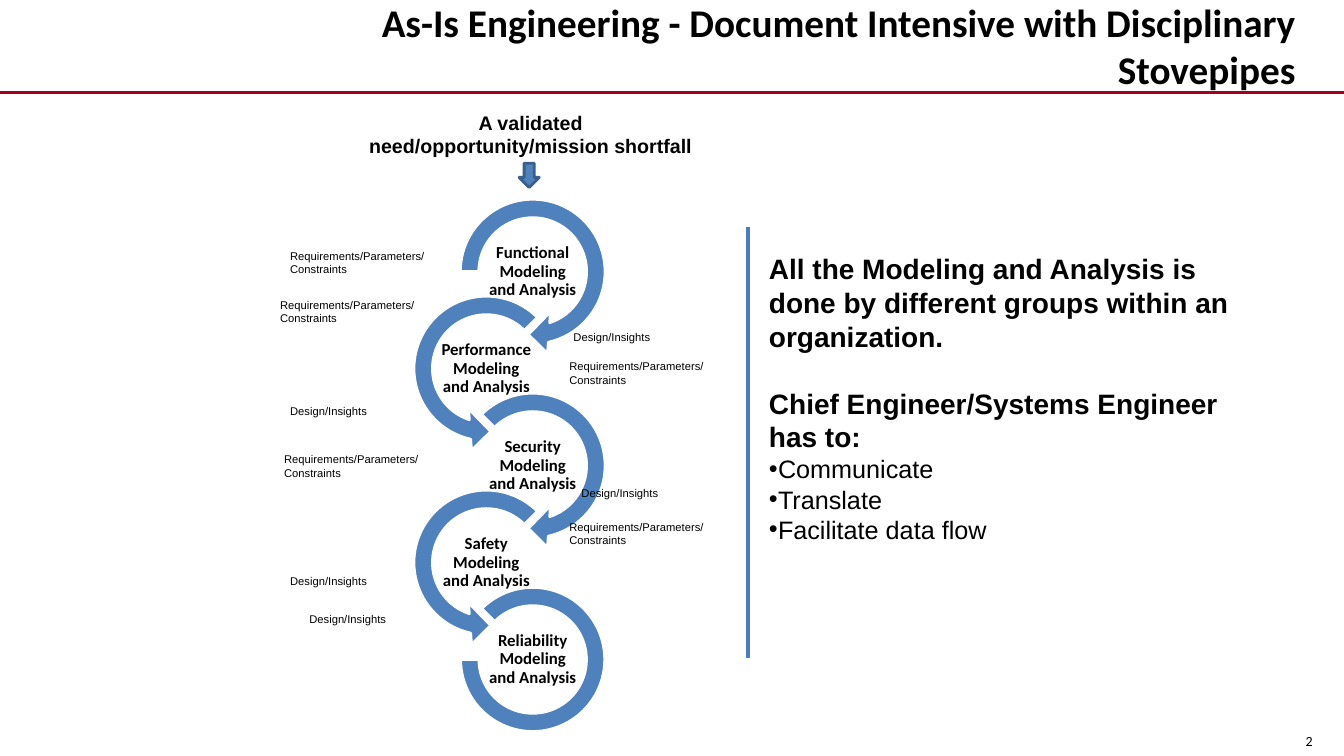
from lxml.etree import SubElement
from pptx import Presentation
from pptx.dml.color import RGBColor
from pptx.enum.shapes import MSO_CONNECTOR, MSO_SHAPE
from pptx.enum.text import MSO_ANCHOR, MSO_AUTO_SIZE, PP_ALIGN
from pptx.oxml.ns import qn
from pptx.util import Inches, Pt

COLORS = {
    "text": "000000",
    "paper": "FFFFFF",
    "rule": "A50021",
    "ring": "4F81BD",
    "divider": "4B7EBC",
    "arrow_edge": "3A5F8C",
}
CELL = 0.1  # grid column and row, in inches
COLUMNS, ROWS = 133.33, 75


def grid(*cells):
    return [Inches(CELL * count) for count in cells]


class SlideBuilder:
    """Places styled elements on the current page by grid columns and rows."""

    def __init__(self, page):
        self.page = page

    def color(self, name):
        return RGBColor.from_string(COLORS[name])

    def style(self, para, size, bold=False, font="Arial", align=PP_ALIGN.LEFT):
        para.alignment = align
        para.font.name = font
        para.font.size = Pt(size)
        para.font.bold = bold
        para.font.color.rgb = self.color("text")

    def title(self, text, area):
        box = self.page.shapes.title
        box.left, box.top, box.width, box.height = grid(*area)
        frame = box.text_frame
        frame.text = text
        frame.word_wrap = True
        frame.auto_size = MSO_AUTO_SIZE.NONE
        frame.vertical_anchor = MSO_ANCHOR.MIDDLE
        self.style(frame.paragraphs[0], 28, True, "Calibri", PP_ALIGN.RIGHT)

    def text(self, text, area, size, **style):
        box = self.page.shapes.add_textbox(*grid(*area))
        box.text_frame.word_wrap = True
        para = box.text_frame.paragraphs[0]
        para.text = text
        self.style(para, size, **style)
        return box.text_frame

    def caption(self, text, area):
        """Tight, centred text inside a ring."""
        frame = self.text(text, area, 12, bold=True, font="Calibri", align=PP_ALIGN.CENTER)
        frame.vertical_anchor = MSO_ANCHOR.MIDDLE
        frame.margin_left = frame.margin_right = Inches(0.01)
        frame.margin_top = frame.margin_bottom = Inches(0.01)
        frame.paragraphs[0].line_spacing = 0.9

    def bullet(self, frame, text, size):
        para = frame.add_paragraph()
        para.text = text
        properties = para._p.get_or_add_pPr()
        properties.set("marL", str(Inches(0.09)))
        properties.set("indent", str(-Inches(0.09)))
        SubElement(properties, qn("a:buFont"), typeface="Arial")
        SubElement(properties, qn("a:buChar"), char="•")
        self.style(para, size)

    def shape(self, kind, area, fill, edge=None, adjustments=()):
        shape = self.page.shapes.add_shape(kind, *grid(*area))
        shape.shadow.inherit = False
        shape.fill.solid()
        shape.fill.fore_color.rgb = self.color(fill)
        if edge:
            shape.line.color.rgb = self.color(edge)
            shape.line.width = Pt(2)
        else:
            shape.line.fill.background()
        for index, value in enumerate(adjustments):
            shape.adjustments[index] = value
        return shape

    def line(self, ends, color, width):
        line = self.page.shapes.add_connector(MSO_CONNECTOR.STRAIGHT, *grid(*ends))
        line.line.color.rgb = self.color(color)
        line.line.width = Pt(width)
        SubElement(line._element.spPr, qn("a:effectLst"))

    def page_number(self, number, area):
        frame = self.shape(MSO_SHAPE.RECTANGLE, area, "paper").text_frame
        frame.word_wrap = False
        frame.vertical_anchor = MSO_ANCHOR.MIDDLE
        frame.text = number
        self.style(frame.paragraphs[0], 10, font="Calibri", align=PP_ALIGN.RIGHT)


def add_discipline_chain(builder):
    right_arrow, left_arrow = MSO_SHAPE.CIRCULAR_ARROW, MSO_SHAPE.LEFT_CIRCULAR_ARROW
    left_turn = (0.11, 11.423, 63, 189, 0.125)
    rings = [
        ("Functional", right_arrow, (0.11, 11.423, 45, 108, 0.125)),
        ("Performance", left_arrow, left_turn),
        ("Security", right_arrow, (0.11, 11.423, 45, 135, 0.125)),
        ("Safety", left_arrow, left_turn),
        ("Reliability", MSO_SHAPE.BLOCK_ARC, (135, 108, 0.127)),
    ]
    pitch = 9.62
    for index, (discipline, kind, adjustments) in enumerate(rings):
        left = 39.9 if index % 2 else 44.5
        top = 18.6 + pitch * index
        inset = 1.2 if kind == MSO_SHAPE.BLOCK_ARC else 0
        size = 16.7 - 2 * inset
        builder.shape(kind, (left + inset, top + inset, size, size), "ring", "paper", adjustments)
        builder.caption(f"{discipline} Modeling and Analysis", (left + 3.7, top + 6, 9.3, 4.7))


def add_exchange_labels(builder):
    requirements = "Requirements/Parameters/Constraints"
    insights = "Design/Insights"
    labels = [
        (requirements, 27.8, 24.2),
        ("Requirements/Parameters/\vConstraints", 26.8, 29.1),
        (requirements, 55.5, 35.2),
        (requirements, 27.2, 44.4),
        (requirements, 55.5, 51.1),
        (insights, 55.9, 32.3),
        (insights, 27.8, 39.6),
        (insights, 56.7, 47.8),
        (insights, 27.8, 56.5),
        (insights, 29.7, 60.3),
    ]
    for text, left, top in labels:
        builder.text(text, (left, top, 18.1, 2.4 if text == insights else 3.7), 8)


def add_message(builder):
    frame = builder.text(
        "All the Modeling and Analysis is done by different groups within an organization.",
        (75.3, 24.5, 49.3, 33.3), 20, bold=True)
    duties = frame.add_paragraph()
    duties.text = "Chief Engineer/Systems Engineer has to:"
    duties.space_before = Pt(24)
    builder.style(duties, 20, bold=True)
    for duty in ("Communicate", "Translate", "Facilitate data flow"):
        builder.bullet(frame, duty, 18)


def main():
    deck = Presentation()
    deck.slide_width, deck.slide_height = grid(COLUMNS, ROWS)
    builder = SlideBuilder(deck.slides.add_slide(deck.slide_layouts[5]))
    builder.line((0, 9.2, COLUMNS, 9.2), "rule", 2.25)
    builder.page_number("2", (1.1, 72.3, 130.1, 2.5))
    builder.title("As-Is Engineering - Document Intensive with Disciplinary Stovepipes",
                  (26.7, 0, 102.8, 9))
    add_message(builder)
    add_discipline_chain(builder)
    add_exchange_labels(builder)
    builder.line((74.2, 22.5, 74.2, 65.3), "divider", 3)
    builder.text("A validated need/opportunity/mission shortfall", (35.5, 10.5, 34.3, 5.7), 14,
                 bold=True, align=PP_ALIGN.CENTER)
    builder.shape(MSO_SHAPE.DOWN_ARROW, (51.5, 16.2, 2, 2.4), "ring", "arrow_edge")
    deck.save("out.pptx")


if __name__ == "__main__":
    main()
